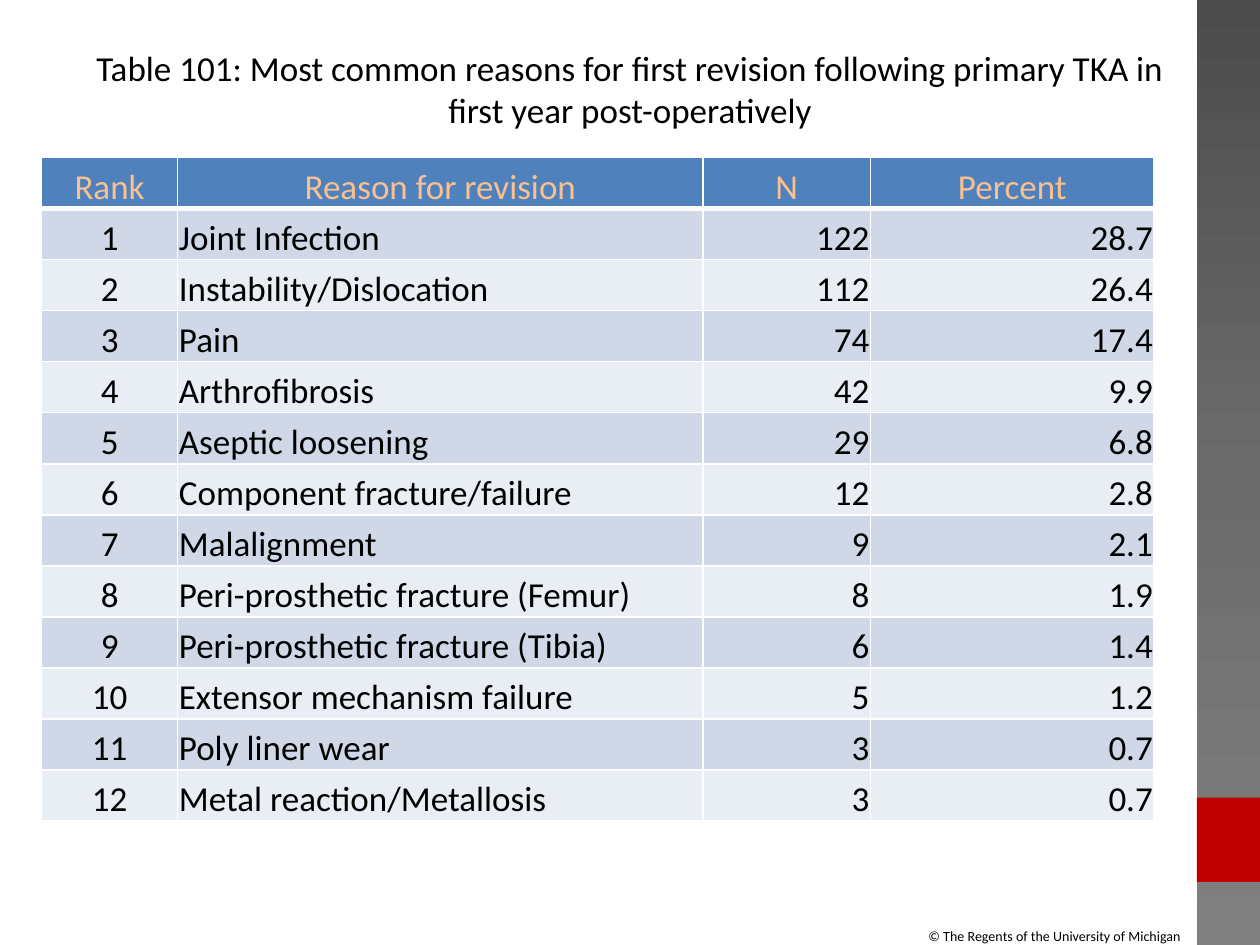
import copy
import pptx
import pptx.dml.color
import pptx.enum.shapes
import pptx.enum.text
import pptx.oxml
import pptx.oxml.ns
import pptx.util
from dataclasses import dataclass

Inches = pptx.util.Inches
Align = pptx.enum.text.PP_ALIGN
Anchor = pptx.enum.text.MSO_ANCHOR


@dataclass
class Theme:
    font: str = "Calibri"
    size: int = 20
    small: int = 8
    ink: str = "000000"
    line: str = "FFFFFF"
    head: str = "4F81BD"
    label: str = "FAC090"
    bands: tuple = ("D0D8E8", "E9EDF4")
    side: tuple = ("4C4C4C", "6B6B6B", "808080")
    accent: str = "C00000"


theme = Theme()
rgb = pptx.dml.color.RGBColor.from_string


def style(para, size, color, align):
    para.alignment = align
    for run in para.runs:
        run.font.name = theme.font
        run.font.size = pptx.util.Pt(size)
        run.font.bold = False
        run.font.color.rgb = rgb(color)


def edge(cell, side, width):
    xml = (f'<a:{side} {pptx.oxml.ns.nsdecls("a")} w="{width * 12700}">'
           f'<a:solidFill><a:srgbClr val="{theme.line}"/></a:solidFill></a:{side}>')
    props = cell._tc.get_or_add_tcPr()
    spot = len(props.findall(pptx.oxml.ns.qn("a:lnL") + "/..")) and 0
    spot = sum(1 for part in props if "}ln" in part.tag)
    props.insert(spot, pptx.oxml.parse_xml(xml))


deck = pptx.Presentation()
deck.slide_width, deck.slide_height = Inches(10), Inches(7.5)
slide = deck.slides.add_slide(deck.slide_layouts[5])

# Side bar with its red block
bars = []
for top, height in ((0, 7.5), (6.33, 0.67)):
    bar = slide.shapes.add_shape(pptx.enum.shapes.MSO_SHAPE.RECTANGLE,
                                 Inches(9.5), Inches(top), Inches(0.5), Inches(height))
    bar.shadow.inherit = False
    bar.line.fill.background()
    bars.append(bar)
side, block = bars
block.fill.solid()
block.fill.fore_color.rgb = rgb(theme.accent)
side.fill.gradient()
side.fill.gradient_angle = 270
first = side.fill.gradient_stops[0]._gs
first.addnext(copy.deepcopy(first))
for i, (stop, color) in enumerate(zip(side.fill.gradient_stops, theme.side)):
    stop.position = i / 2
    stop.color.rgb = rgb(color)

# Copyright line
note = slide.shapes.add_textbox(Inches(7.27), Inches(7.31), Inches(2.23), Inches(0.24))
note.text_frame.word_wrap = False
note.text_frame.text = "© The Regents of the University of Michigan"
style(note.text_frame.paragraphs[0], theme.small, theme.ink, Align.LEFT)

# Title
title = slide.shapes.title
title.left, title.top = Inches(0.5), Inches(0.08)
title.width, title.height = Inches(9), Inches(1.25)
title.text_frame.text = ("Table 101: Most common reasons for first revision "
                         "following primary TKA in first year post-operatively")
title.text_frame.vertical_anchor = Anchor.MIDDLE
style(title.text_frame.paragraphs[0], theme.size, theme.ink, Align.CENTER)

# Table of reasons; the rank is the row number
data = [
    ("Joint Infection", "122", "28.7"),
    ("Instability/Dislocation", "112", "26.4"),
    ("Pain", "74", "17.4"),
    ("Arthrofibrosis", "42", "9.9"),
    ("Aseptic loosening", "29", "6.8"),
    ("Component fracture/failure", "12", "2.8"),
    ("Malalignment", "9", "2.1"),
    ("Peri-prosthetic fracture (Femur)", "8", "1.9"),
    ("Peri-prosthetic fracture (Tibia)", "6", "1.4"),
    ("Extensor mechanism failure", "5", "1.2"),
    ("Poly liner wear", "3", "0.7"),
    ("Metal reaction/Metallosis", "3", "0.7"),
]
rows = [("Rank", "Reason for revision", "N", "Percent")]
rows += [(str(rank), *row) for rank, row in enumerate(data, 1)]
widths = (1.08, 4.17, 1.33, 2.25)
aligns = (Align.CENTER, Align.LEFT, Align.RIGHT, Align.RIGHT)

table = slide.shapes.add_table(len(rows), len(widths), Inches(0.33), Inches(1.25),
                               Inches(sum(widths)), Inches(5.27)).table
for col, width in zip(table.columns, widths):
    col.width = Inches(width)

for r, row in enumerate(rows):
    for c, text in enumerate(row):
        cell = table.cell(r, c)
        cell.text_frame.text = text
        cell.vertical_anchor = Anchor.BOTTOM
        cell.margin_left = cell.margin_right = cell.margin_top = Inches(0.01)
        cell.margin_bottom = 0
        cell.fill.solid()
        cell.fill.fore_color.rgb = rgb(theme.bands[(r - 1) % 2] if r else theme.head)
        style(cell.text_frame.paragraphs[0], theme.size,
              theme.ink if r else theme.label, aligns[c] if r else Align.CENTER)
        # The rule under the header row is heavier
        edge(cell, "lnL", 1)
        edge(cell, "lnR", 1)
        edge(cell, "lnT", 3 if r == 1 else 1)
        edge(cell, "lnB", 3 if r == 0 else 1)

deck.save("out.pptx")
